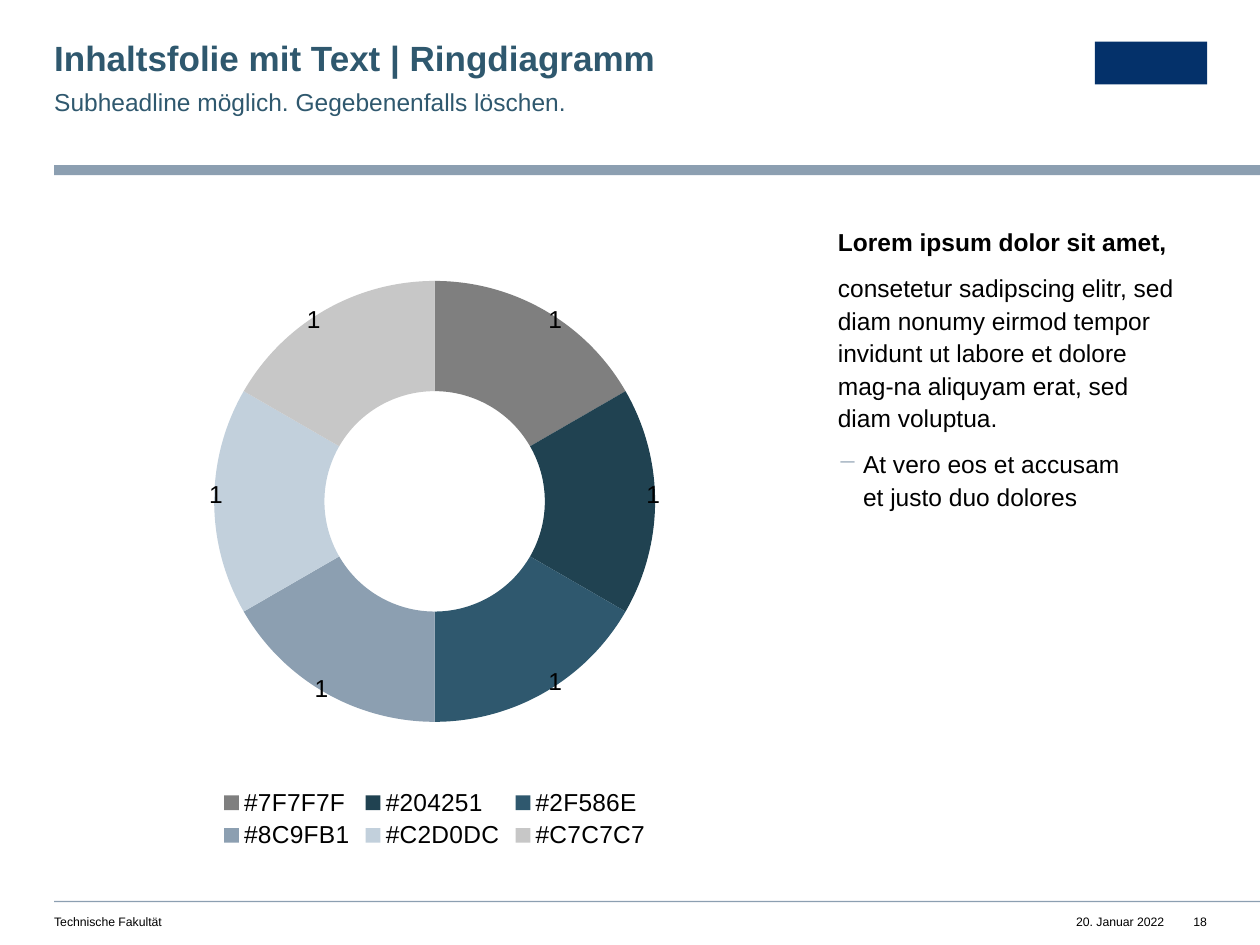
from lxml.etree import SubElement
from pptx import Presentation
from pptx.chart.data import CategoryChartData
from pptx.dml.color import RGBColor
from pptx.enum.chart import XL_CHART_TYPE, XL_LEGEND_POSITION
from pptx.enum.shapes import MSO_SHAPE
from pptx.enum.text import MSO_ANCHOR, MSO_AUTO_SIZE, PP_ALIGN
from pptx.oxml import parse_xml
from pptx.oxml.ns import nsdecls, qn
from pptx.util import Inches, Pt

FONT = "Arial"
COLORS = {
    "text": "000000",
    "heading": "2F586E",
    "rule": "8C9FB1",
    "emblem": "04316A",
}
SEGMENTS = ["7F7F7F", "204251", "2F586E", "8C9FB1", "C2D0DC", "C7C7C7"]
LABEL_SHIFTS = [(0.05, -0.06), (0.07, -0.01), (0.05, 0.06),
                (-0.04, 0.07), (-0.07, -0.01), (-0.05, -0.06)]
LEFT = 0.43


def style_font(font, size, color="text", bold=False):
    font.name = FONT
    font.size = Pt(size)
    font.bold = bold
    font.color.rgb = RGBColor.from_string(COLORS[color])


def prepare_frame(shape, wrap=True, right_inset=0):
    frame = shape.text_frame
    frame.auto_size = MSO_AUTO_SIZE.NONE
    frame.word_wrap = wrap
    frame.vertical_anchor = MSO_ANCHOR.TOP
    frame.margin_left = frame.margin_top = frame.margin_bottom = 0
    frame.margin_right = Inches(right_inset)
    return frame


def write_text(para, text, size=14, color="text", bold=False,
               align=PP_ALIGN.LEFT, spacing=1.1, after=8):
    para.text = text
    para.alignment = align
    para.line_spacing = spacing
    para.space_before = Pt(0)
    para.space_after = Pt(after)
    style_font(para.font, size, color, bold)
    for span in para.runs:
        style_font(span.font, size, color, bold)


def add_box(slide, left, top, width, height, **frame_format):
    box = slide.shapes.add_textbox(Inches(left), Inches(top), Inches(width), Inches(height))
    return prepare_frame(box, **frame_format)


def add_block(slide, left, top, width, height, color):
    block = slide.shapes.add_shape(
        MSO_SHAPE.RECTANGLE, Inches(left), Inches(top), Inches(width), Inches(height))
    block.shadow.inherit = False
    block.fill.solid()
    block.fill.fore_color.rgb = RGBColor.from_string(COLORS[color])
    block.line.fill.background()


def add_dash(para, indent, color):
    properties = para._p.get_or_add_pPr()
    properties.set("marL", str(Inches(indent)))
    properties.set("indent", str(-Inches(indent)))
    bullet_color = SubElement(properties, qn("a:buClr"))
    SubElement(bullet_color, qn("a:srgbClr"), val=COLORS[color])
    SubElement(properties, qn("a:buChar"), char="−")
    default_run = properties.find(qn("a:defRPr"))
    if default_run is not None:
        properties.append(default_run)


def manual_layout(**values):
    parts = "".join(f'<c:{name} val="{value}"/>' for name, value in values.items())
    return parse_xml(
        f'<c:layout {nsdecls("c")}><c:manualLayout>{parts}</c:manualLayout></c:layout>')


def place_plot(chart):
    plot_area = chart._chartSpace.chart.plotArea
    for layout in plot_area.findall(qn("c:layout")):
        plot_area.remove(layout)
    plot_area.insert(0, manual_layout(
        layoutTarget="inner", xMode="edge", yMode="edge", x=0.11, y=0.09, w=0.78, h=0.7))
    plot_area.find(".//" + qn("c:holeSize")).set("val", "80")


def add_ring_chart(slide, left, top, width, height):
    data = CategoryChartData()
    data.categories = [f"#{color}" for color in SEGMENTS]
    data.add_series("Series 1", [1] * len(SEGMENTS))
    chart = slide.shapes.add_chart(
        XL_CHART_TYPE.DOUGHNUT, Inches(left), Inches(top),
        Inches(width), Inches(height), data).chart
    style_font(chart.font, 10)
    chart.has_title = False
    chart.has_legend = True
    chart.legend.position = XL_LEGEND_POSITION.BOTTOM
    chart.legend.include_in_layout = False
    style_font(chart.legend.font, 14)
    place_plot(chart)

    series = chart.plots[0].series[0]
    labels = series.data_labels
    labels.show_value = True
    labels.show_percentage = False
    style_font(labels.font, 14)
    for index, (color, (x, y)) in enumerate(zip(SEGMENTS, LABEL_SHIFTS)):
        point = series.points[index]
        point.format.fill.solid()
        point.format.fill.fore_color.rgb = RGBColor.from_string(color)
        point.format.line.fill.background()
        style_font(point.data_label.font, 14)
    for label, (x, y) in zip(labels._element.findall(qn("c:dLbl")), LABEL_SHIFTS):
        label.insert(1, manual_layout(x=x, y=y))


def add_title(slide, text):
    title = slide.shapes.title
    title.left, title.top = Inches(LEFT), Inches(0.33)
    title.width, title.height = Inches(5.61), Inches(0.3)
    write_text(prepare_frame(title).paragraphs[0], text, size=20, color="heading",
               bold=True, spacing=0.9, after=0)


def add_body(slide):
    frame = add_box(slide, 6.65, 1.78, 2.93, 5, right_inset=0.2)
    write_text(frame.paragraphs[0], "Lorem ipsum dolor sit amet,", bold=True)
    write_text(frame.add_paragraph(),
               "consetetur sadipscing elitr, sed diam nonumy eirmod tempor invidunt "
               "ut labore et dolore mag-na aliquyam erat, sed diam voluptua.")
    item = frame.add_paragraph()
    write_text(item, "At vero eos et accusam\vet justo duo dolores")
    item.level = 1
    add_dash(item, 0.2, "rule")


def add_footer(slide):
    for text, left, width, align in [
        ("Technische Fakultät", LEFT, 4.49, PP_ALIGN.LEFT),
        ("20. Januar 2022", 8.53, 0.71, PP_ALIGN.RIGHT),
        ("18", 9.38, 0.2, PP_ALIGN.RIGHT),
    ]:
        frame = add_box(slide, left, 7.26, width, 0.12, wrap=align == PP_ALIGN.LEFT)
        write_text(frame.paragraphs[0], text, size=7, align=align, spacing=1.0, after=0)


def main():
    deck = Presentation()
    deck.slide_width, deck.slide_height = Inches(10), Inches(7.5)
    page = deck.slides.add_slide(deck.slide_layouts[5])
    for top, height in [(1.31, 0.08), (7.15, 0.01)]:
        add_block(page, LEFT, top, 10 - LEFT, height, "rule")
    add_block(page, 8.69, 0.33, 0.89, 0.34, "emblem")
    add_title(page, "Inhaltsfolie mit Text | Ringdiagramm")
    subheadline = add_box(page, LEFT, 0.67, 5.61, 0.24, right_inset=0.39)
    write_text(subheadline.paragraphs[0], "Subheadline möglich. Gegebenenfalls löschen.",
               color="heading")
    add_ring_chart(page, LEFT, 1.78, 6.04, 5)
    add_body(page)
    add_footer(page)
    deck.save("out.pptx")


if __name__ == "__main__":
    main()
